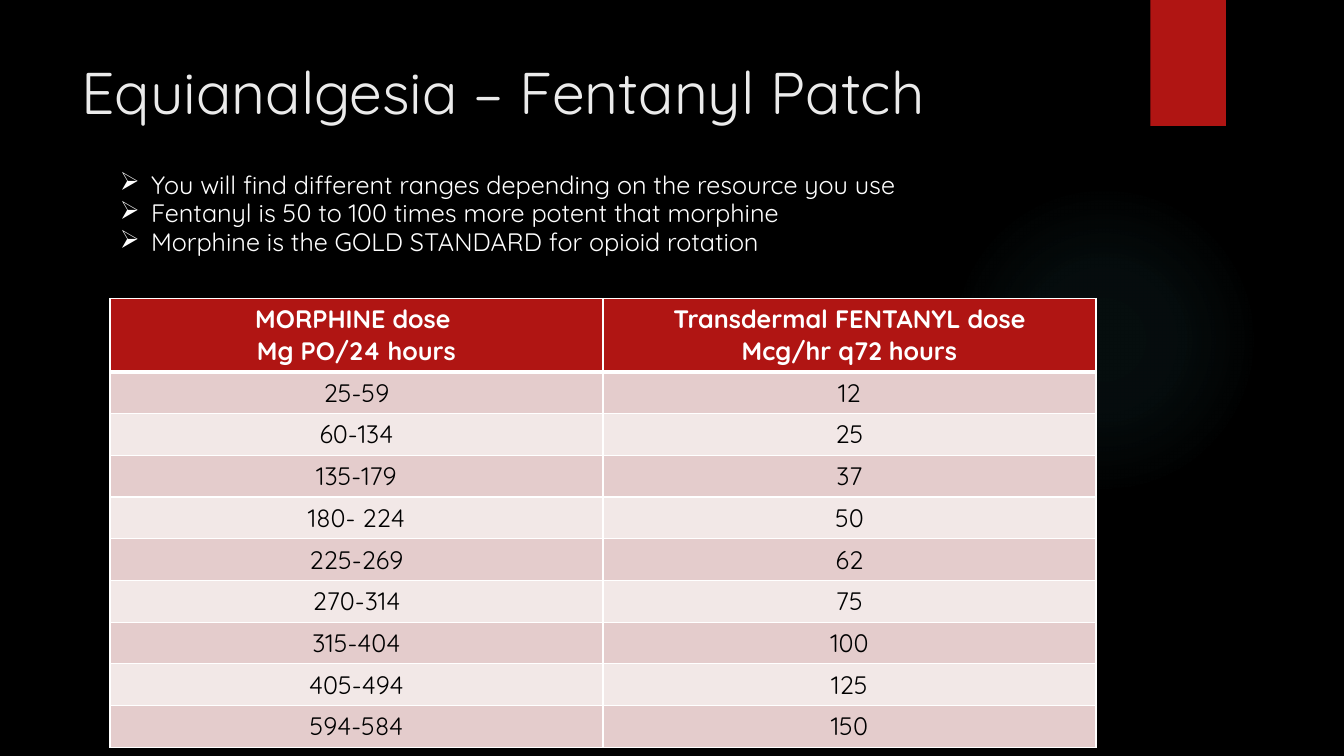
import pptx
import pptx.dml.color
import pptx.enum.shapes
import pptx.enum.text
import pptx.oxml
import pptx.oxml.ns
import pptx.util

PX = 9144  # 100 px to the inch
FONT = "Quicksand"
RED, WHITE, BLACK = "B01513", "FFFFFF", "000000"
BANDS = ["E4CCCC", "F2E8E7"]
NS = 'xmlns:a="http://schemas.openxmlformats.org/drawingml/2006/main"'
SHAPE = pptx.enum.shapes.MSO_SHAPE
ALIGN = pptx.enum.text.PP_ALIGN
ANCHOR = pptx.enum.text.MSO_ANCHOR

POINTS = [
    "You will find different ranges depending on the resource you use",
    "Fentanyl is 50 to 100 times more potent that morphine",
    "Morphine is the GOLD STANDARD for opioid rotation",
]
DOSES = [
    ("MORPHINE dose \nMg PO/24 hours", "Transdermal FENTANYL dose\nMcg/hr q72 hours"),
    ("25-59", "12"),
    ("60-134", "25"),
    ("135-179", "37"),
    ("180- 224", "50"),
    ("225-269", "62"),
    ("270-314", "75"),
    ("315-404", "100"),
    ("405-494", "125"),
    ("594-584", "150"),
]


def color(code):
    return pptx.dml.color.RGBColor.from_string(code)


def scale(*lengths):
    return [n * PX for n in lengths]


def style(para, size, code, bold=False):
    font = para.font
    font.name, font.size, font.bold = FONT, pptx.util.Pt(size), bold
    font.color.rgb = color(code)


def add_plain(slide, kind, box):
    shape = slide.shapes.add_shape(kind, *scale(*box))
    shape.shadow.inherit = False
    shape.line.fill.background()
    return shape


def add_glow(slide, box):
    shape = add_plain(slide, SHAPE.OVAL, box)
    stops = "".join(
        f'<a:gs pos="{pos}000"><a:srgbClr val="50B9C1">'
        f'<a:alpha val="{alpha}000"/></a:srgbClr></a:gs>'
        for pos, alpha in [(0, 7), (36, 6), (69, 0)])
    grad = pptx.oxml.parse_xml(
        f'<a:gradFill {NS}><a:gsLst>{stops}</a:gsLst><a:path path="circle">'
        '<a:fillToRect l="50000" t="50000" r="50000" b="50000"/>'
        '</a:path></a:gradFill>')
    geom = shape._element.spPr.find(pptx.oxml.ns.qn("a:prstGeom"))
    geom.addnext(grad)


def add_tab(slide, box):
    shape = add_plain(slide, SHAPE.RECTANGLE, box)
    shape.fill.solid()
    shape.fill.fore_color.rgb = color(RED)


def set_title(slide, box, text):
    title = slide.shapes.title
    title.left, title.top, title.width, title.height = scale(*box)
    frame = title.text_frame
    frame.text = text
    frame.word_wrap = True
    frame.auto_size = pptx.enum.text.MSO_AUTO_SIZE.NONE
    frame.vertical_anchor = ANCHOR.TOP
    para = frame.paragraphs[0]
    para.alignment = ALIGN.LEFT
    style(para, 42, "EBEBEB")


def add_points(slide, box, points):
    frame = slide.shapes.add_textbox(*scale(*box)).text_frame
    frame.word_wrap = True
    frame.text = "\n".join(points)
    for para in frame.paragraphs:
        para.line_spacing = 0.95
        props = para._p.get_or_add_pPr()
        props.set("marL", str(31 * PX))
        props.set("indent", str(-31 * PX))
        props.append(pptx.oxml.parse_xml(f'<a:buChar {NS} char="➢"/>'))
        style(para, 18, WHITE)


def set_edges(cell, top, bottom):
    props = cell._tc.get_or_add_tcPr()
    for side, width in [("L", 1), ("R", 1), ("T", top), ("B", bottom)]:
        props.append(pptx.oxml.parse_xml(
            f'<a:ln{side} {NS} w="{pptx.util.Pt(width)}"><a:solidFill>'
            f'<a:srgbClr val="{WHITE}"/></a:solidFill></a:ln{side}>'))


def add_doses(slide, box, rows):
    head, body = 73, 41
    left, top, width = box
    high = head + body * (len(rows) - 1)
    table = slide.shapes.add_table(
        len(rows), 2, *scale(left, top, width, high)).table
    for r, row in enumerate(rows):
        first = r == 0
        table.rows[r].height = (head if first else body) * PX
        for c, text in enumerate(row):
            cell = table.cell(r, c)
            # A thick rule parts the header from the body
            set_edges(cell, 3 if r == 1 else 1, 3 if first else 1)
            cell.fill.solid()
            cell.fill.fore_color.rgb = color(RED if first else BANDS[(r - 1) % 2])
            cell.text = text
            for para in cell.text_frame.paragraphs:
                para.alignment = ALIGN.CENTER
                style(para, 18, WHITE if first else BLACK, first)


def main():
    deck = pptx.Presentation()
    deck.slide_width, deck.slide_height = scale(1333, 750)
    slide = deck.slides.add_slide(deck.slide_layouts[5])
    slide.background.fill.solid()
    slide.background.fill.fore_color.rgb = color(BLACK)

    # Backdrop
    add_glow(slide, (941, 183, 308, 308))
    add_tab(slide, (1141, 0, 75, 125))

    # Content
    set_title(slide, (71, 50, 1029, 95), "Equianalgesia – Fentanyl Patch")
    add_doses(slide, (109, 296, 978), DOSES)
    add_points(slide, (109, 165, 840, 131), POINTS)
    deck.save("out.pptx")


if __name__ == "__main__":
    main()
